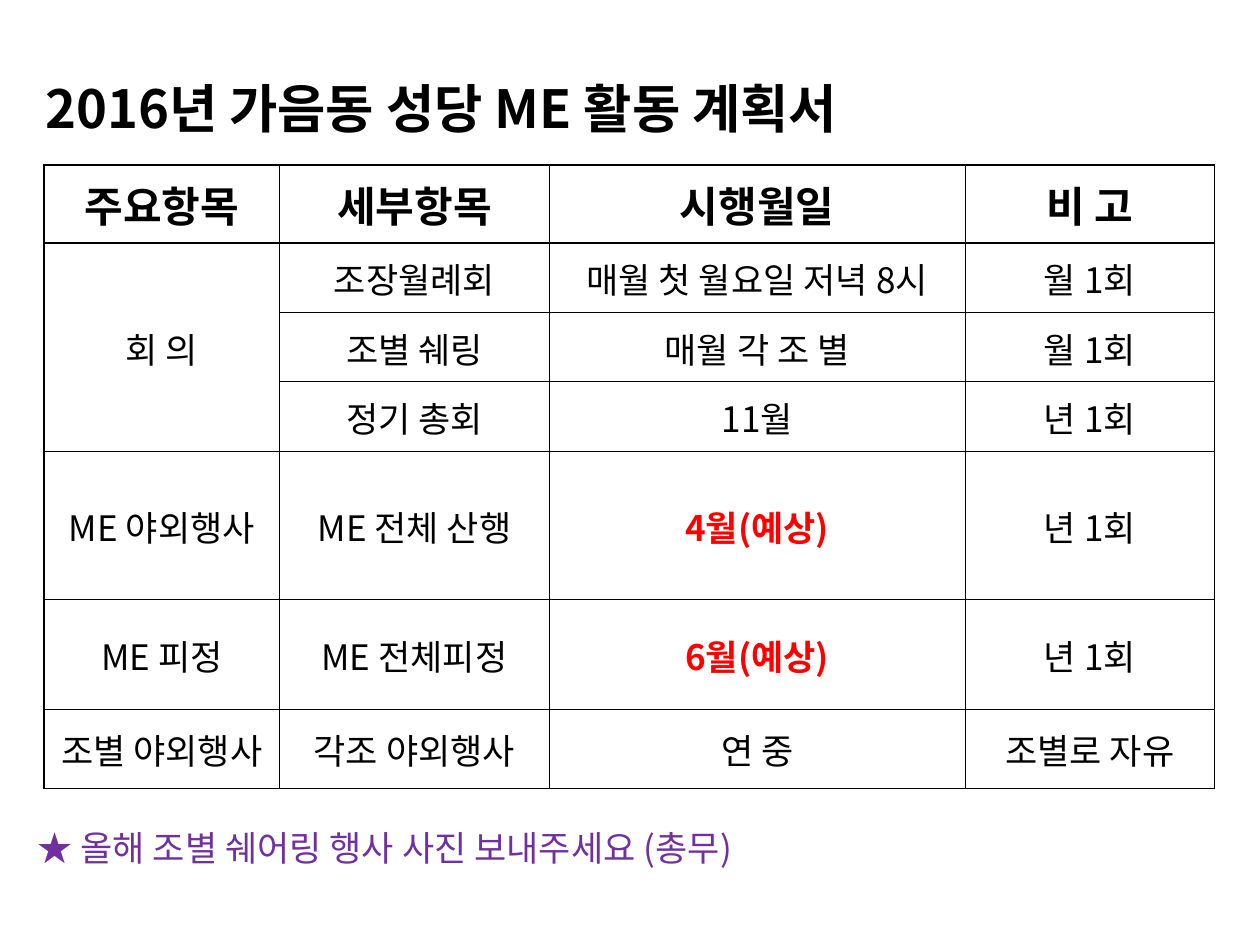
from lxml import etree
from pptx import Presentation
from pptx import util as u
from pptx.dml.color import RGBColor
from pptx.enum import text
from pptx.oxml import ns

THEME = {
    "font": "Noto Sans CJK KR",
    "title": 30, "header": 24, "body": 20,
    "ink": "000000", "accent": "FF0000", "note": "7030A0",
    "thin": 0.5, "thick": 1,
}
COLS = [1.87, 2.14, 3.3, 1.98]
ROWS = [0.95, 0.62, 0.55, 0.55, 0.55, 1.18, 0.87, 0.63]
PLAN = [
    ["2016년 가음동 성당 ME 활동 계획서", "", "", ""],
    ["주요항목", "세부항목", "시행월일", "비 고"],
    ["회 의", "조장월례회", "매월 첫 월요일 저녁 8시", "월 1회"],
    ["", "조별 쉐링", "매월 각 조 별", "월 1회"],
    ["", "정기 총회", "11월", "년 1회"],
    ["ME 야외행사", "ME 전체 산행", "4월(예상)", "년 1회"],
    ["ME 피정", "ME 전체피정", "6월(예상)", "년 1회"],
    ["조별 야외행사", "각조 야외행사", "연 중", "조별로 자유"],
]


def write(tf, words, size, color, bold=False):
    """Put one line of text in a frame, in the theme font for Latin and Hangul."""
    p = tf.paragraphs[0]
    p.text = words
    for r in p.runs:
        r.font.name = THEME["font"]
        r.font.size = u.Pt(size)
        r.font.bold = bold
        r.font.color.rgb = RGBColor.from_string(color)
        ea = etree.SubElement(r.font._element, ns.qn("a:ea"))
        ea.set("typeface", THEME["font"])
    return p


def set_borders(cell, widths):
    """Draw the left, right, top and bottom lines; a width of 0 means no line."""
    tcPr = cell._tc.get_or_add_tcPr()
    for i, (side, width) in enumerate(zip("LRTB", widths)):
        ln = etree.Element(ns.qn(f"a:ln{side}"), w=str(u.Pt(width)))
        if width:
            fill = etree.SubElement(ln, ns.qn("a:solidFill"))
            etree.SubElement(fill, ns.qn("a:srgbClr"), val=THEME["ink"])
        else:
            etree.SubElement(ln, ns.qn("a:noFill"))
        tcPr.insert(i, ln)


prs = Presentation()
prs.slide_width, prs.slide_height = u.Inches(10), u.Inches(7.5)
s = prs.slides.add_slide(prs.slide_layouts[6])

# Plan table, with the heading in its merged first row
table = s.shapes.add_table(len(ROWS), len(COLS), u.Inches(0.35), u.Inches(0.36),
                           u.Inches(sum(COLS)), u.Inches(sum(ROWS))).table
table.first_row = table.horz_banding = False
for col, width in zip(table.columns, COLS):
    col.width = u.Inches(width)
for row, height in zip(table.rows, ROWS):
    row.height = u.Inches(height)
table.cell(0, 0).merge(table.cell(0, 2))
table.cell(2, 0).merge(table.cell(4, 0))

thin, thick = THEME["thin"], THEME["thick"]
last_row, last_col = len(ROWS) - 1, len(COLS) - 1
for i, line in enumerate(PLAN):
    for j, words in enumerate(line):
        cell = table.cell(i, j)
        if cell.is_spanned:
            continue
        cell.fill.background()
        cell.vertical_anchor = text.MSO_ANCHOR.MIDDLE
        cell.margin_left = cell.margin_right = cell.margin_top = u.Inches(0.01)
        cell.margin_bottom = 0
        expected = "예상" in words
        size = THEME[("title", "header")[i] if i < 2 else "body"]
        color = THEME["accent" if expected else "ink"]
        p = write(cell.text_frame, words, size, color, i < 2 or expected)
        if i == 0:
            set_borders(cell, (0, 0, 0, thick))
            continue
        p.alignment = text.PP_ALIGN.CENTER
        set_borders(cell, (thick if j == 0 else thin,
                           thick if j == last_col else thin,
                           thick if i in (1, 2) else thin,
                           thick if i in (1, last_row) else thin))

# Note under the table
note = s.shapes.add_textbox(u.Inches(0.2), u.Inches(6.51), u.Inches(9.45), u.Inches(0.44))
tf = note.text_frame
tf.word_wrap = True
tf.auto_size = text.MSO_AUTO_SIZE.SHAPE_TO_FIT_TEXT
write(tf, "★ 올해 조별 쉐어링 행사 사진 보내주세요 (총무)", THEME["body"], THEME["note"])

prs.save("out.pptx")
